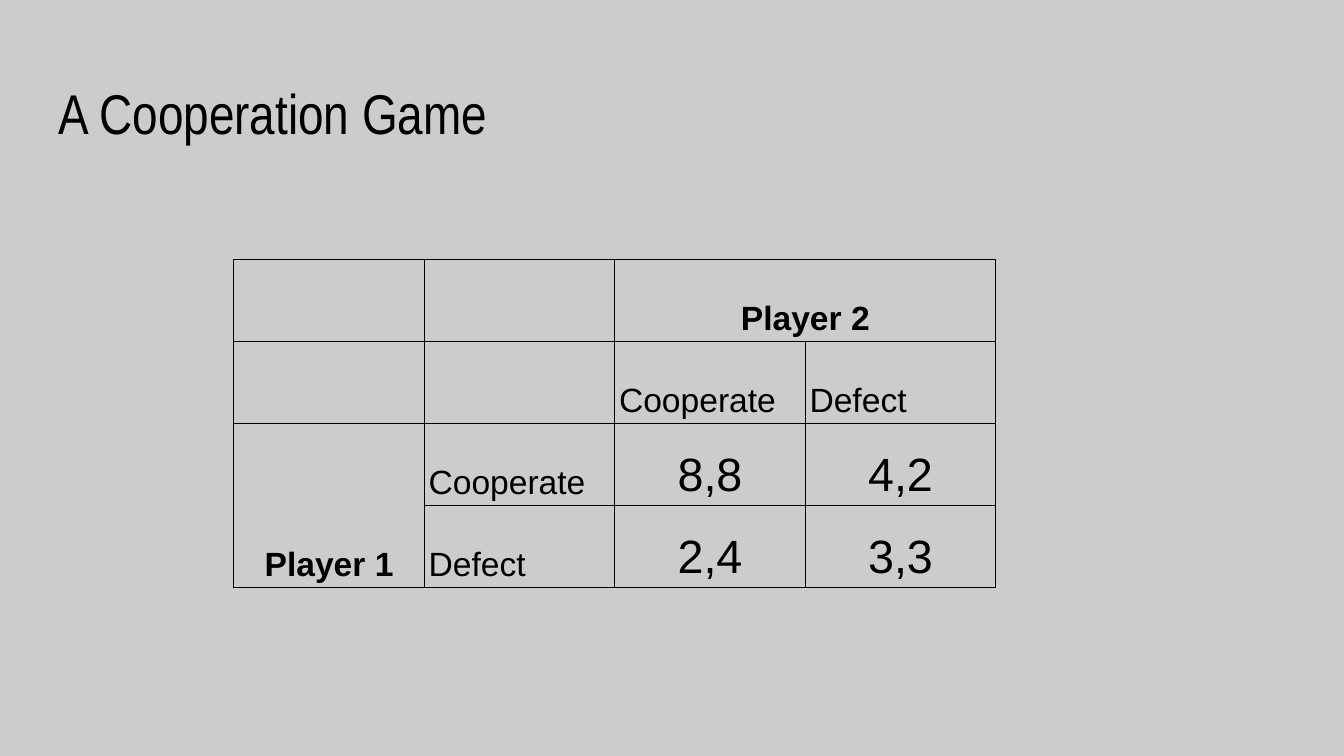
from lxml.etree import SubElement as Sub
from pptx import Presentation
from pptx.dml.color import RGBColor
from pptx.enum.text import MSO_ANCHOR as Anchor, MSO_AUTO_SIZE as Fit, PP_ALIGN as Align
from pptx.oxml.ns import qn
from pptx.util import Cm, Pt

GREY = RGBColor(0xCC, 0xCC, 0xCC)
BLACK = RGBColor(0, 0, 0)
SIDE, TALL = 3.6, 1.55
PAD = Cm(0.08)
GRID = [
    ["", "", "Player 2", ""],
    ["", "", "Cooperate", "Defect"],
    ["Player 1", "Cooperate", "8,8", "4,2"],
    ["", "Defect", "2,4", "3,3"],
]


def style(par, face, size, bold=False):
    """Set the font of a paragraph."""
    font = par.font
    font.name, font.size, font.bold = face, Pt(size), bold
    font.color.rgb = BLACK


def add_title(slide, text):
    """Place and format the title."""
    title = slide.shapes.title
    title.left, title.top = Cm(0.86), Cm(1.24)
    title.width, title.height = Cm(23.67), Cm(1.6)
    frame = title.text_frame
    frame.text = text
    frame.auto_size, frame.word_wrap = Fit.NONE, True
    frame.vertical_anchor = Anchor.TOP
    frame.margin_left = frame.margin_right = Cm(0.25)
    frame.margin_top = frame.margin_bottom = Cm(0.25)
    par = frame.paragraphs[0]
    par.alignment = Align.LEFT
    style(par, "Arial Narrow", 30)


def add_edges(cell):
    """Draw a thin line on each side of a cell."""
    props = cell._tc.get_or_add_tcPr()
    for tag in ("a:lnL", "a:lnR", "a:lnT", "a:lnB"):
        line = Sub(props, qn(tag), w=str(Pt(0.75)))
        fill = Sub(line, qn("a:solidFill"))
        Sub(fill, qn("a:srgbClr"), val=str(BLACK))


def fill_cell(cell, text):
    """Write and format one cell."""
    add_edges(cell)
    cell.fill.background()
    cell.vertical_anchor = Anchor.BOTTOM
    cell.margin_left = cell.margin_right = PAD
    cell.margin_top = cell.margin_bottom = PAD
    if not text:
        return
    cell.text = text
    par = cell.text_frame.paragraphs[0]
    par.line_spacing = 1.15
    player, score = text.startswith("Player"), "," in text
    par.alignment = Align.CENTER if player or score else Align.LEFT
    style(par, "Arial", 25 if score else 18, player)


def add_game(slide):
    """Build the payoff table."""
    rows, cols = len(GRID), len(GRID[0])
    frame = slide.shapes.add_table(
        rows, cols, Cm(4.42), Cm(4.91), Cm(SIDE * cols), Cm(TALL * rows))
    table = frame.table
    table.first_row = table.horz_banding = False
    for col in table.columns:
        col.width = Cm(SIDE)
    for row, texts in zip(table.rows, GRID):
        row.height = Cm(TALL)
        for cell, text in zip(row.cells, texts):
            fill_cell(cell, text)
    table.cell(0, 2).merge(table.cell(0, 3))
    table.cell(2, 0).merge(table.cell(3, 0))


def main():
    """Build and save the slide."""
    deck = Presentation()
    deck.slide_width, deck.slide_height = Cm(25.4), Cm(14.29)
    slide = deck.slides.add_slide(deck.slide_layouts[5])
    back = slide.background.fill
    back.solid()
    back.fore_color.rgb = GREY
    add_title(slide, "A Cooperation Game")
    add_game(slide)
    deck.save("out.pptx")


if __name__ == "__main__":
    main()
